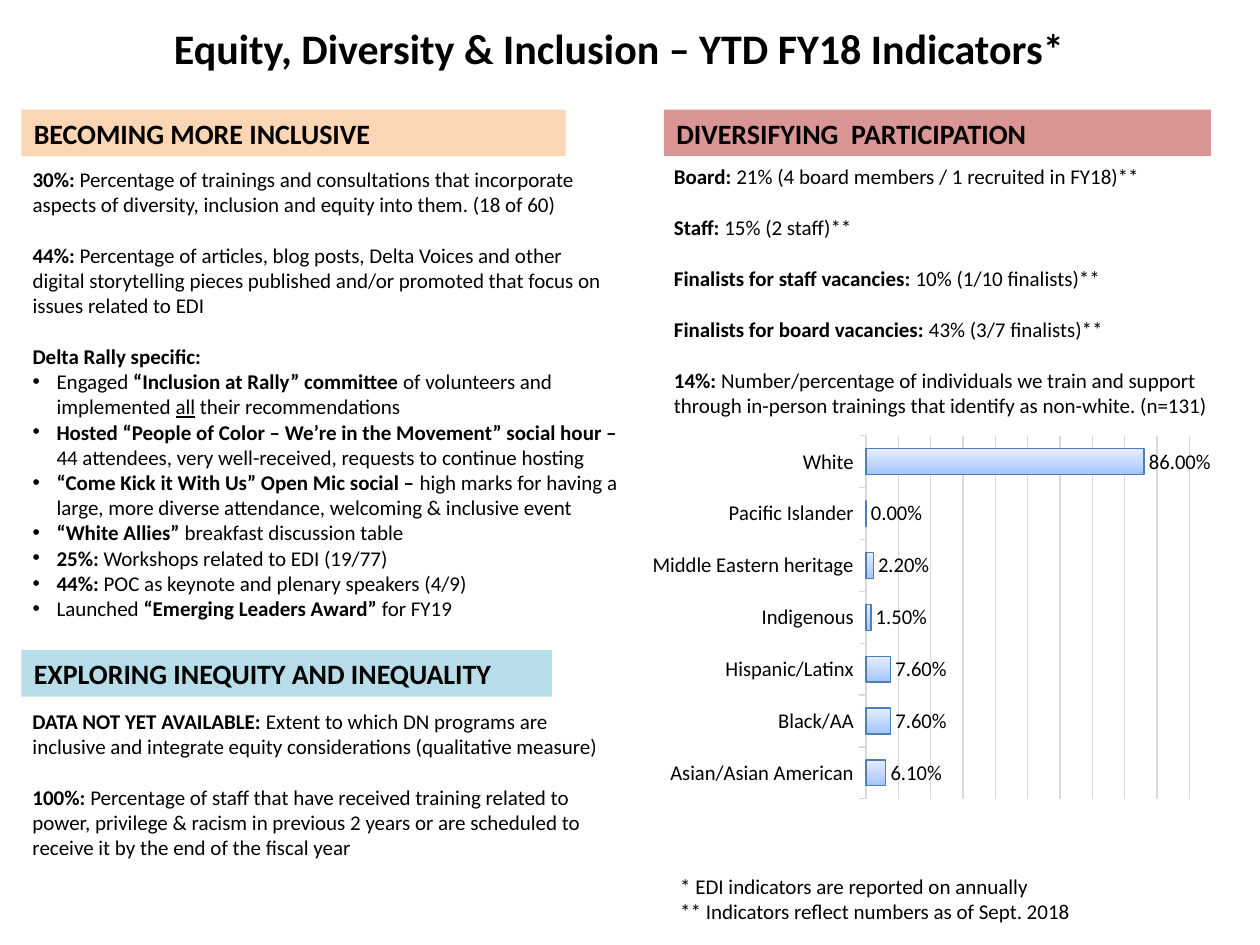
"""Build a one-page report of equity, diversity and inclusion indicators."""
from dataclasses import dataclass

from lxml.etree import SubElement
from pptx import Presentation
from pptx.chart.data import CategoryChartData
from pptx.dml.color import RGBColor
from pptx.enum.chart import XL_CHART_TYPE as ChartType
from pptx.enum.chart import XL_LABEL_POSITION as LabelPosition
from pptx.enum.chart import XL_TICK_MARK as TickMark
from pptx.enum.shapes import MSO_SHAPE as Shape
from pptx.enum.text import PP_ALIGN as Align
from pptx.oxml.ns import qn
from pptx.util import Inches, Pt


@dataclass(frozen=True)
class Theme:
    font: str = "Calibri"
    text: RGBColor = RGBColor.from_string("000000")
    peach: RGBColor = RGBColor.from_string("FCD5B5")
    rose: RGBColor = RGBColor.from_string("D99694")
    aqua: RGBColor = RGBColor.from_string("B7DEE8")
    grid: RGBColor = RGBColor.from_string("D9D9D9")
    bar_line: RGBColor = RGBColor.from_string("4D7EB9")
    bar_low: RGBColor = RGBColor.from_string("A4C4FF")
    bar_high: RGBColor = RGBColor.from_string("E6EEFF")
    title: Pt = Pt(24)
    heading: Pt = Pt(16)
    body: Pt = Pt(12)
    gap: Pt = Pt(14.65)
    hairline: Pt = Pt(0.75)


@dataclass(frozen=True)
class Entry:
    """Hold a paragraph whose text marks bold as |bold| and underline as _line_."""
    text: str
    spaced: bool = True
    bullet: bool = False


THEME = Theme()
PERCENT = "0.00%"

HEADINGS = (
    ("BECOMING MORE INCLUSIVE", (0.17, 0.87, 4.32, 0.37), THEME.peach),
    ("DIVERSIFYING  PARTICIPATION", (5.27, 0.87, 4.34, 0.37), THEME.rose),
    ("EXPLORING INEQUITY AND INEQUALITY", (0.17, 5.16, 4.21, 0.37), THEME.aqua),
)

RALLY = (
    "Engaged| “Inclusion at Rally” committee| of volunteers and implemented "
    "_all_ their recommendations",
    "|Hosted “People of Color – We’re in the Movement” social hour – |"
    "44 attendees, very well-received, requests to continue hosting",
    "|“Come Kick it With Us” Open Mic social – |high marks for having a large, "
    "more diverse attendance, welcoming & inclusive event",
    "|“White Allies” |breakfast discussion table",
    "|25%: |Workshops related to EDI (19/77)",
    "|44%: |POC as keynote and plenary speakers (4/9)",
    "Launched |“Emerging Leaders Award” |for FY19",
)

INCLUSIVE = (
    Entry("|30%: |Percentage of trainings and consultations that incorporate "
          "aspects of diversity, inclusion and equity into them. (18 of 60)"),
    Entry("|44%: |Percentage of articles, blog posts, Delta Voices and other "
          "digital storytelling pieces published and/or promoted that focus on "
          "issues related to EDI"),
    Entry("|Delta Rally specific:|"),
    *(Entry(text, spaced=False, bullet=True) for text in RALLY),
)

PARTICIPATION = (
    Entry("|Board: |21% (4 board members / 1 recruited in FY18)**"),
    Entry("|Staff: |15% (2 staff)**"),
    Entry("|Finalists for staff vacancies: |10% (1/10 finalists)**"),
    Entry("|Finalists for board vacancies: |43% (3/7 finalists)**"),
    Entry("|14%: |Number/percentage of individuals we train and support through "
          "in-person trainings that identify as non-white. (n=131)"),
)

INEQUITY = (
    Entry("|DATA NOT YET AVAILABLE: |Extent to which DN programs are inclusive "
          "and integrate equity considerations (qualitative measure)"),
    Entry("|100%: |Percentage of staff that have received training related to "
          "power, privilege & racism in previous 2 years or are scheduled to "
          "receive it by the end of the fiscal year"),
)

FOOTNOTES = (
    Entry("* EDI indicators are reported on annually", spaced=False),
    Entry("** Indicators reflect numbers as of Sept. 2018", spaced=False),
)

TEXTS = (
    (INCLUSIVE, (0.16, 1.27, 4.85, 3.72)),
    (PARTICIPATION, (5.25, 1.25, 4.55, 2.1)),
    (INEQUITY, (0.16, 5.57, 4.74, 1.31)),
    (FOOTNOTES, (5.3, 6.88, 4.5, 0.5)),
)

TRAINEES = {
    "Asian/Asian American": 0.061,
    "Black/AA": 0.076,
    "Hispanic/Latinx": 0.076,
    "Indigenous": 0.015,
    "Middle Eastern heritage": 0.022,
    "Pacific Islander": 0,
    "White": 0.86,
}


def apply(target, **values):
    for name, value in values.items():
        setattr(target, name, value)


def style_font(font, size, **values):
    apply(font, name=THEME.font, size=size, **values)
    font.color.rgb = THEME.text


def style_line(line, color):
    line.color.rgb = color
    line.width = THEME.hairline


def add_bullet(para):
    props = para._p.get_or_add_pPr()
    props.set("marL", str(Inches(0.19)))
    props.set("indent", str(-Inches(0.19)))
    SubElement(props, qn("a:buFont"), typeface="Arial")
    SubElement(props, qn("a:buChar"), char="•")


def fill_para(para, entry, size):
    for index, part in enumerate(entry.text.split("|")):
        for level, words in enumerate(part.split("_")):
            if words:
                span = para.add_run()
                span.text = words
                style_font(span.font, size, bold=index % 2 == 1, underline=level % 2 == 1)


def add_text(page, entries, place, size=THEME.body, align=Align.LEFT):
    box = page.shapes.add_textbox(*map(Inches, place))
    frame = box.text_frame
    frame.word_wrap = True
    for index, entry in enumerate(entries):
        para = frame.add_paragraph() if index else frame.paragraphs[0]
        gap = THEME.gap if index and entry.spaced else Pt(0)
        apply(para, alignment=align, space_before=gap)
        if entry.bullet:
            add_bullet(para)
        fill_para(para, entry, size)


def add_heading(page, text, place, color):
    bar = page.shapes.add_shape(Shape.RECTANGLE, *map(Inches, place))
    bar.shadow.inherit = False
    bar.fill.solid()
    bar.fill.fore_color.rgb = color
    bar.line.fill.background()
    para = bar.text_frame.paragraphs[0]
    para.alignment = Align.LEFT
    fill_para(para, Entry(f"|{text}|"), THEME.heading)


def style_series(series):
    fill = series.format.fill
    fill.gradient()
    fill.gradient_angle = 90
    for stop, color in zip(fill.gradient_stops, (THEME.bar_low, THEME.bar_high)):
        stop.color.rgb = color
    style_line(series.format.line, THEME.bar_line)
    labels = series.data_labels
    apply(labels, show_value=True, position=LabelPosition.OUTSIDE_END,
          number_format=PERCENT, number_format_is_linked=False)
    style_font(labels.font, THEME.body)


def add_bar_chart(page, place):
    data = CategoryChartData(number_format=PERCENT)
    data.categories = TRAINEES.keys()
    data.add_series("Series 1", TRAINEES.values())
    chart = page.shapes.add_chart(ChartType.BAR_CLUSTERED, *map(Inches, place), data).chart
    apply(chart, has_legend=False, has_title=False)
    style_font(chart.font, THEME.body)
    apply(chart.plots[0], gap_width=100, vary_by_categories=False)
    apply(chart.category_axis, major_tick_mark=TickMark.OUTSIDE, has_major_gridlines=False)
    style_font(chart.category_axis.tick_labels.font, THEME.body)
    style_line(chart.category_axis.format.line, THEME.grid)
    apply(chart.value_axis, visible=False, has_major_gridlines=True,
          minimum_scale=0, maximum_scale=1, major_unit=0.1)
    style_line(chart.value_axis.major_gridlines.format.line, THEME.grid)
    style_series(chart.plots[0].series[0])


def main():
    deck = Presentation()
    apply(deck, slide_width=Inches(10), slide_height=Inches(7.5))
    page = deck.slides.add_slide(deck.slide_layouts[6])
    title = Entry("|Equity, Diversity & Inclusion – YTD FY18 Indicators*|")
    add_text(page, [title], (1, 0.13, 7.83, 0.5), THEME.title, Align.CENTER)
    for heading in HEADINGS:
        add_heading(page, *heading)
    for entries, place in TEXTS:
        add_text(page, entries, place)
    add_bar_chart(page, (5.09, 3.4, 4.52, 3))
    deck.save("out.pptx")


if __name__ == "__main__":
    main()
